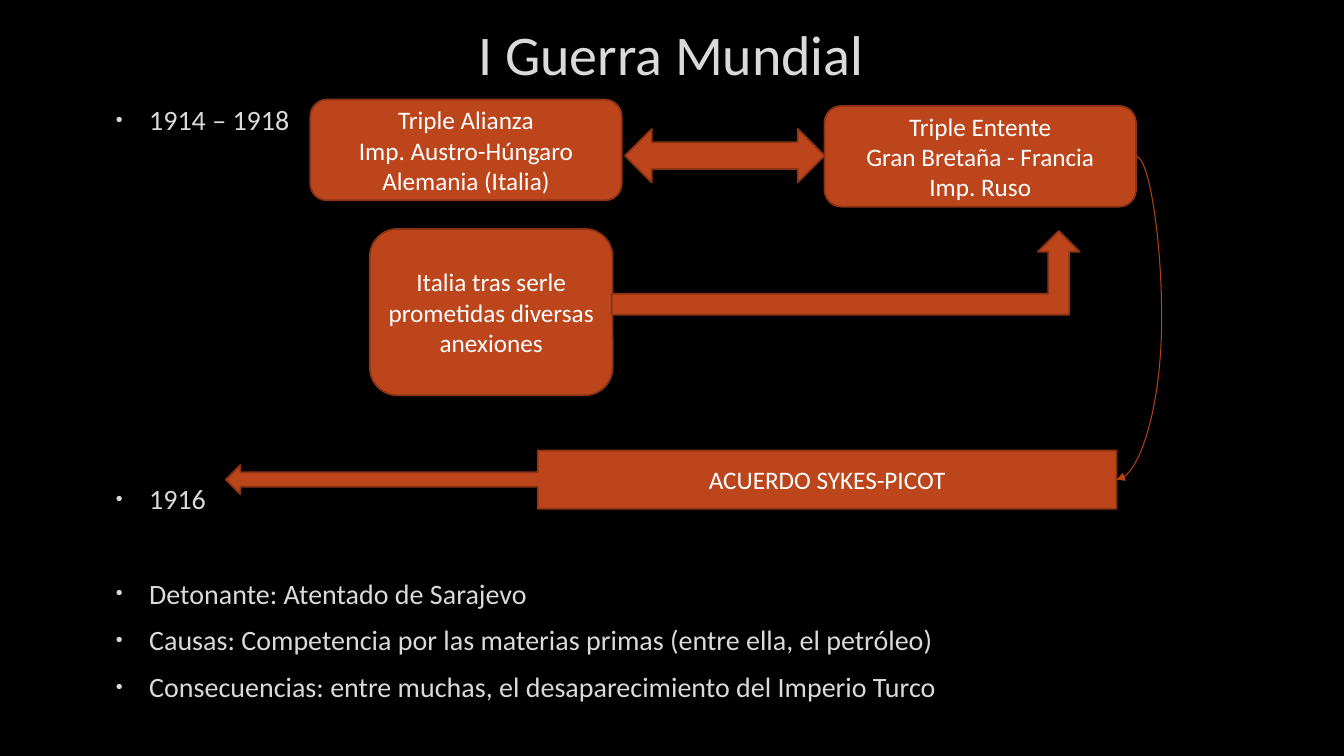
import pptx
import pptx.dml.color
import pptx.enum.shapes
import pptx.enum.text
import pptx.oxml
import pptx.oxml.ns
import pptx.util
from pptx.util import Cm

BLACK = pptx.dml.color.RGBColor(0x00, 0x00, 0x00)
PALE = pptx.dml.color.RGBColor(0xDA, 0xDA, 0xDA)
WHITE = pptx.dml.color.RGBColor(0xFF, 0xFF, 0xFF)
RUST = pptx.dml.color.RGBColor(0xBC, 0x45, 0x1B)
DARK_RUST = pptx.dml.color.RGBColor(0x8B, 0x33, 0x14)
LINK_RUST = pptx.dml.color.RGBColor(0xB4, 0x42, 0x1A)
FONT = "Calibri"
LINE_PITCH = 33.9
SPACE_BEFORE = 3.5
SPACE_AFTER = 6
GEOMETRY = pptx.enum.shapes.MSO_SHAPE
ALIGN = pptx.enum.text.PP_ALIGN
MIDDLE = pptx.enum.text.MSO_ANCHOR.MIDDLE


def append_xml(parent, tag, content="", **attributes):
    """Append a DrawingML element to parent."""
    settings = "".join(f' {key}="{value}"' for key, value in attributes.items())
    namespace = pptx.oxml.ns.nsdecls("a")
    parent.append(pptx.oxml.parse_xml(f"<a:{tag} {namespace}{settings}>{content}</a:{tag}>"))


def add_run(paragraph, text, size, color):
    """Add one formatted run to a paragraph."""
    run = paragraph.add_run()
    run.text = text
    run.font.name = FONT
    run.font.size = pptx.util.Pt(size)
    run.font.color.rgb = color


def fill_lines(frame, lines, size, color):
    """Write centred lines into a vertically centred frame."""
    frame.word_wrap = True
    frame.vertical_anchor = MIDDLE
    for index, line in enumerate(lines):
        paragraph = frame.paragraphs[0] if index == 0 else frame.add_paragraph()
        paragraph.alignment = ALIGN.CENTER
        add_run(paragraph, line, size, color)


def add_title(slide, text):
    """Add the slide heading."""
    heading = slide.shapes.add_textbox(Cm(2.54), Cm(0.23), Cm(28.75), Cm(2.24))
    fill_lines(heading.text_frame, [text], 40, PALE)


def add_timeline(slide, entries):
    """Add bulleted entries, each with the number of line pitches above it."""
    timeline = slide.shapes.add_textbox(Cm(2.54), Cm(2.46), Cm(28.75), Cm(15.32))
    frame = timeline.text_frame
    frame.word_wrap = True
    for index, (text, pitches) in enumerate(entries):
        entry = frame.paragraphs[0] if index == 0 else frame.add_paragraph()
        gap = SPACE_BEFORE + (pitches - 1) * LINE_PITCH if index else 0
        entry.space_before = pptx.util.Pt(gap)
        entry.space_after = pptx.util.Pt(SPACE_AFTER)
        add_run(entry, text, 20, PALE)
        properties = entry._p.get_or_add_pPr()
        properties.set("marL", str(Cm(0.97)))
        properties.set("indent", str(Cm(-0.84)))
        append_xml(properties, "buClr", f'<a:srgbClr val="{PALE}"/>')
        append_xml(properties, "buSzPct", val=70000)
        append_xml(properties, "buFont", typeface="Arial")
        append_xml(properties, "buChar", char="•")


def add_block(slide, geometry, left, top, width, height, lines=()):
    """Add a rust-coloured box or arrow with optional text."""
    block = slide.shapes.add_shape(geometry, Cm(left), Cm(top), Cm(width), Cm(height))
    block.shadow.inherit = False
    block.fill.solid()
    block.fill.fore_color.rgb = RUST
    block.line.color.rgb = DARK_RUST
    block.line.width = pptx.util.Pt(1.25)
    fill_lines(block.text_frame, lines, 18, WHITE)


def add_curved_arrow(slide, start, end, bend):
    """Add a curved arrow whose bulge is set by bend."""
    curve = slide.shapes.add_connector(
        pptx.enum.shapes.MSO_CONNECTOR.CURVE, *map(Cm, start), *map(Cm, end))
    curve.line.color.rgb = LINK_RUST
    curve.line.width = pptx.util.Pt(0.75)
    properties = curve._element.spPr
    append_xml(properties.find(pptx.oxml.ns.qn("a:ln")), "tailEnd", type="triangle")
    append_xml(properties, "effectLst")
    guides = properties.find(pptx.oxml.ns.qn("a:prstGeom")).get_or_add_avLst()
    append_xml(guides, "gd", name="adj1", fmla=f"val {bend}")


def main():
    """Build the First World War slide."""
    presentation = pptx.Presentation()
    presentation.slide_width = Cm(33.87)
    presentation.slide_height = Cm(19.05)
    slide = presentation.slides.add_slide(presentation.slide_layouts[6])
    slide.background.fill.solid()
    slide.background.fill.fore_color.rgb = BLACK

    add_title(slide, "I Guerra Mundial")
    add_timeline(slide, [
        ("1914 – 1918", 1),
        ("1916", 8),
        ("Detonante: Atentado de Sarajevo", 2),
        ("Causas: Competencia por las materias primas (entre ella, el petróleo)", 1),
        ("Consecuencias: entre muchas, el desaparecimiento del Imperio Turco", 1),
    ])
    add_block(slide, GEOMETRY.LEFT_ARROW_CALLOUT, 5.69, 11.35, 22.45, 1.47,
              ["ACUERDO SYKES-PICOT"])
    add_block(slide, GEOMETRY.ROUNDED_RECTANGLE, 7.82, 2.51, 7.85, 2.54,
              ["Triple Alianza", "Imp. Austro-Húngaro", "Alemania (Italia)"])
    add_block(slide, GEOMETRY.ROUNDED_RECTANGLE, 20.78, 2.67, 7.85, 2.54,
              ["Triple Entente", "Gran Bretaña - Francia", "Imp. Ruso"])
    add_curved_arrow(slide, (28.63, 3.94), (28.14, 12.09), -132200)
    add_block(slide, GEOMETRY.LEFT_RIGHT_ARROW, 15.75, 3.25, 5.03, 1.35)
    add_block(slide, GEOMETRY.ROUNDED_RECTANGLE, 9.32, 5.77, 6.12, 4.19,
              ["Italia tras serle prometidas diversas anexiones"])
    add_block(slide, GEOMETRY.BENT_UP_ARROW, 15.42, 5.82, 11.79, 2.11)
    presentation.save("out.pptx")


if __name__ == "__main__":
    main()
